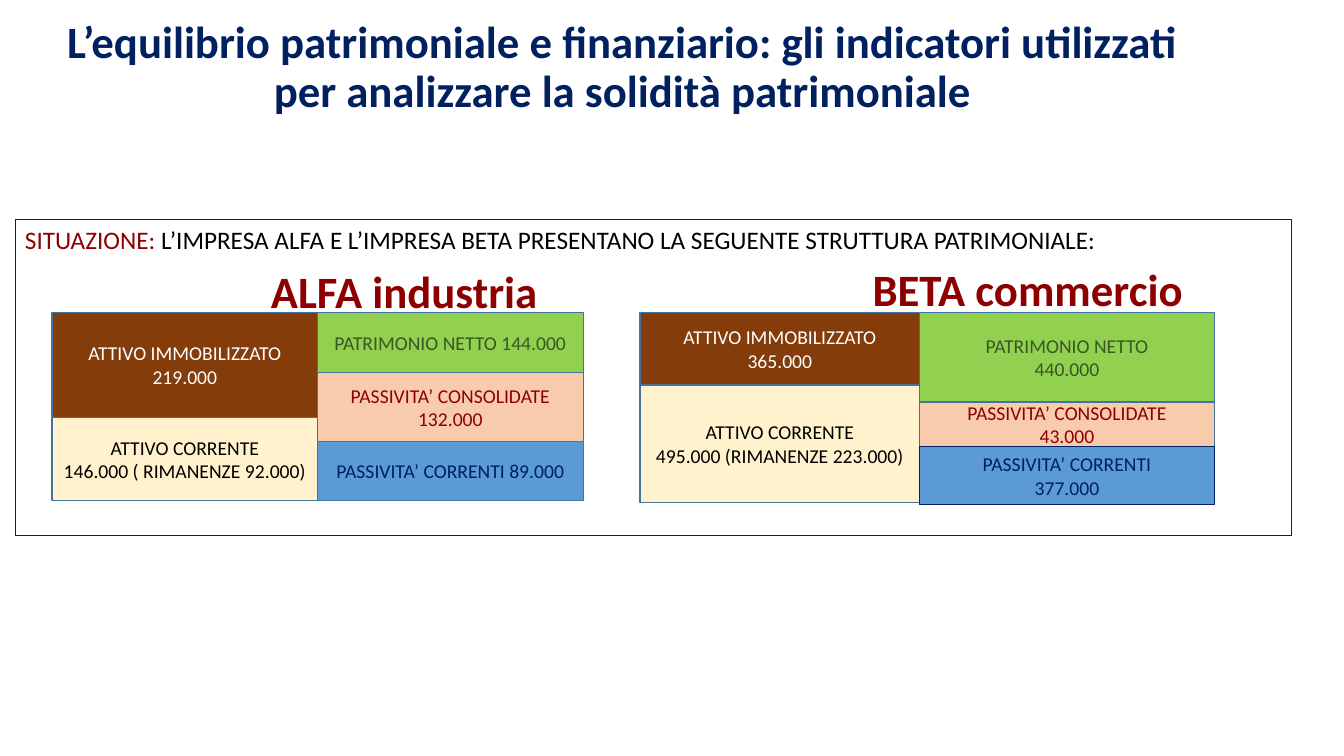
from pptx import Presentation
from pptx.dml.color import RGBColor
from pptx.enum import shapes, text
from pptx.util import Cm, Pt

NAVY = RGBColor(0x00, 0x20, 0x60)
DARK_RED = RGBColor(0x8E, 0x00, 0x00)
BLACK = RGBColor(0x00, 0x00, 0x00)
WHITE = RGBColor(0xFF, 0xFF, 0xFF)
BROWN = RGBColor(0x84, 0x3C, 0x0B)
CREAM = RGBColor(0xFF, 0xF2, 0xCC)
GREEN = RGBColor(0x92, 0xD0, 0x50)
DARK_GREEN = RGBColor(0x38, 0x57, 0x23)
PEACH = RGBColor(0xF8, 0xCB, 0xAD)
BLUE = RGBColor(0x5B, 0x9B, 0xD5)
EDGE = RGBColor(0x43, 0x73, 0x9E)

# Fill, font and line colour of each balance sheet item
FIXED = (BROWN, WHITE, EDGE)
CURRENT = (CREAM, BLACK, EDGE)
EQUITY = (GREEN, DARK_GREEN, EDGE)
LONG_DEBT = (PEACH, DARK_RED, EDGE)
SHORT_DEBT = (BLUE, NAVY, EDGE)
SHORT_DEBT_NAVY = (BLUE, NAVY, NAVY)

SHEET_TOP = 7.87

# Columns: left, width, then (height, style, label) from top to bottom
COLUMNS = [
    (1.31, 6.7, [(2.65, FIXED, "ATTIVO IMMOBILIZZATO\n219.000"),
                 (2.1, CURRENT, "ATTIVO CORRENTE\n146.000 ( RIMANENZE 92.000)")]),
    (8, 6.7, [(1.52, EQUITY, "PATRIMONIO NETTO 144.000"),
              (1.73, LONG_DEBT, "PASSIVITA’ CONSOLIDATE 132.000"),
              (1.5, SHORT_DEBT, "PASSIVITA’ CORRENTI 89.000")]),
    (16.13, 7.05, [(1.83, FIXED, "ATTIVO IMMOBILIZZATO 365.000"),
                   (2.97, CURRENT, "ATTIVO CORRENTE\n495.000 (RIMANENZE 223.000)")]),
    (23.17, 7.44, [(2.26, EQUITY, "PATRIMONIO NETTO\n440.000"),
                   (1.12, LONG_DEBT, "PASSIVITA’ CONSOLIDATE\n43.000"),
                   (1.47, SHORT_DEBT_NAVY, "PASSIVITA’ CORRENTI\n377.000")]),
]


def style_paragraph(p, size, color, align, bold=False):
    p.alignment = align
    p.font.name = "Calibri"
    p.font.size = Pt(size)
    p.font.bold = bold
    if color is not None:
        p.font.color.rgb = color


def add_box(s, left, top, width, height, fill, line, line_width):
    sp = s.shapes.add_shape(shapes.MSO_SHAPE.RECTANGLE,
                            Cm(left), Cm(top), Cm(width), Cm(height))
    sp.shadow.inherit = False
    if fill is None:
        sp.fill.background()
    else:
        sp.fill.solid()
        sp.fill.fore_color.rgb = fill
    sp.line.color.rgb = line
    sp.line.width = Pt(line_width)
    sp.text_frame.word_wrap = True
    return sp


def add_heading(s, left, top, width, height, label, color, wrap, align):
    tf = s.shapes.add_textbox(Cm(left), Cm(top), Cm(width), Cm(height)).text_frame
    tf.word_wrap = wrap
    tf.vertical_anchor = text.MSO_ANCHOR.MIDDLE
    tf.text = label
    p = tf.paragraphs[0]
    style_paragraph(p, 32, color, align, bold=True)
    return p


def add_situation(s):
    tf = add_box(s, 0.38, 5.54, 32.18, 7.95, None, NAVY, 0.75).text_frame
    tf.vertical_anchor = text.MSO_ANCHOR.TOP
    p = tf.paragraphs[0]
    style_paragraph(p, 18, None, text.PP_ALIGN.LEFT)
    for label, color in [
        ("SITUAZIONE: ", DARK_RED),
        ("L’IMPRESA ALFA E L’IMPRESA BETA PRESENTANO "
         "LA SEGUENTE STRUTTURA PATRIMONIALE:", BLACK),
    ]:
        r = p.add_run()
        r.text = label
        r.font.color.rgb = color


def add_column(s, left, width, items):
    top = SHEET_TOP
    for height, (fill, color, line), label in items:
        tf = add_box(s, left, top, width, height, fill, line, 1).text_frame
        tf.vertical_anchor = text.MSO_ANCHOR.MIDDLE
        tf.text = label
        for p in tf.paragraphs:
            style_paragraph(p, 14, color, text.PP_ALIGN.CENTER)
        top += height


def main():
    prs = Presentation()
    prs.slide_width, prs.slide_height = Cm(33.87), Cm(19.05)
    s = prs.slides.add_slide(prs.slide_layouts[6])

    # Title
    title = add_heading(s, 1.09, 1.04, 29.21, 1.37,
                        "L’equilibrio patrimoniale e finanziario: gli indicatori "
                        "utilizzati per analizzare la solidità patrimoniale",
                        NAVY, True, text.PP_ALIGN.CENTER)
    title.line_spacing = 0.9

    # Framed situation with the two balance sheets
    add_situation(s)
    for left, width, items in COLUMNS:
        add_column(s, left, width, items)

    # Company names
    add_heading(s, 6.58, 6.5, 7.57, 1.63, "ALFA industria",
                DARK_RED, False, text.PP_ALIGN.LEFT)
    add_heading(s, 21.74, 6.45, 8.41, 1.63, "BETA commercio",
                DARK_RED, False, text.PP_ALIGN.LEFT)

    prs.save("out.pptx")


if __name__ == "__main__":
    main()
